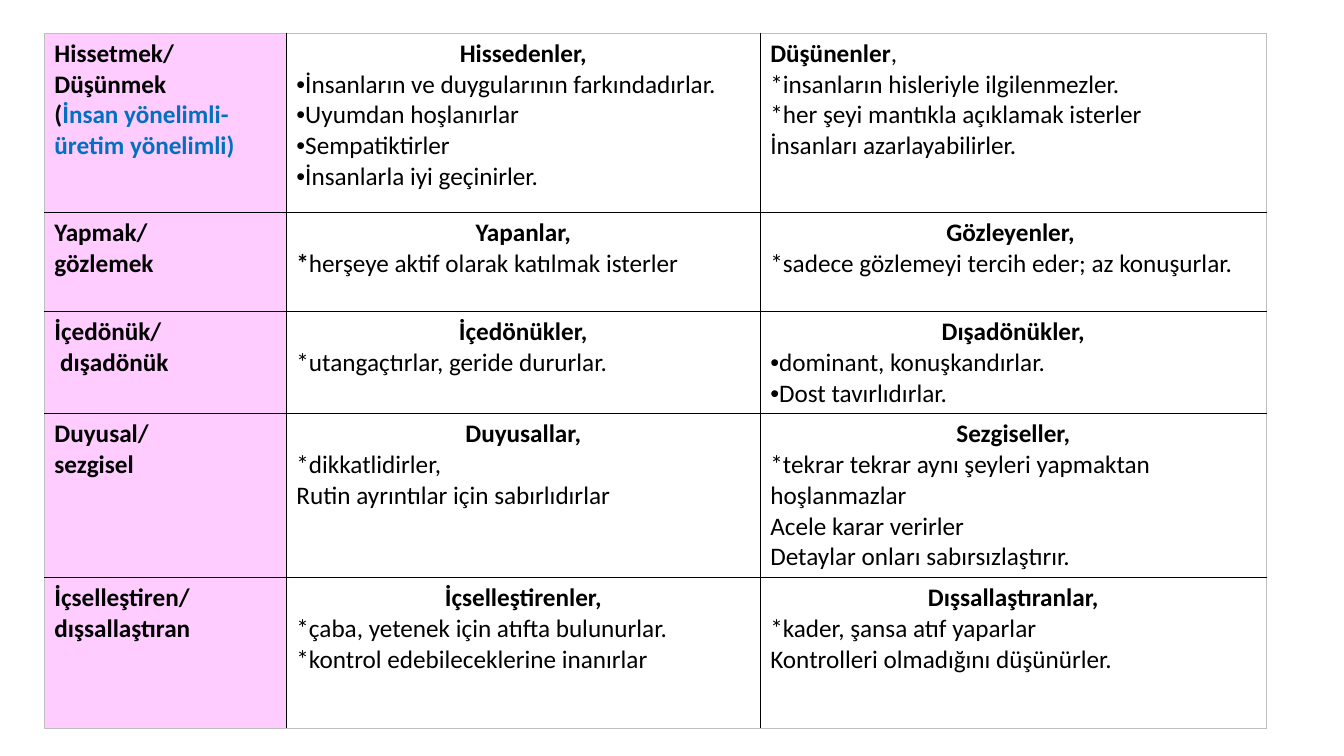
from lxml import etree
from pptx import Presentation
from pptx import util as u
from pptx.dml.color import RGBColor
from pptx.enum import text
from pptx.oxml.ns import qn

HUES = {"ink": "000000", "blue": "0070C0", "pink": "FFCCFF", "white": "FFFFFF", "edge": "BFBFBF"}
FORMS = {
    "bold": {"bold": True, "hue": "ink"},
    "plain": {"bold": False, "hue": "ink"},
    "blue": {"bold": True, "hue": "blue"},
}
COLS = [2.4, 4.7, 5.02]
ROWS = [1.78, 0.98, 0.93, 1.49, 1.49]
TRAITS = [
    [["Hissetmek/", "Düşünmek", [("(", "bold"), ("İnsan yönelimli-üretim yönelimli)", "blue")]],
     ["Hissedenler,", "•İnsanların ve duygularının farkındadırlar.", "•Uyumdan hoşlanırlar",
      "•Sempatiktirler", "•İnsanlarla iyi geçinirler."],
     [[("Düşünenler", "bold"), (",", "plain")], "*insanların hisleriyle ilgilenmezler.",
      "*her şeyi mantıkla açıklamak isterler", "İnsanları azarlayabilirler."]],
    [["Yapmak/", "gözlemek"],
     ["Yapanlar,", [("*", "bold"), ("herşeye aktif olarak katılmak isterler", "plain")]],
     ["Gözleyenler, ", "*sadece gözlemeyi tercih eder; az konuşurlar."]],
    [["İçedönük/", " dışadönük"],
     ["İçedönükler,", "*utangaçtırlar, geride dururlar."],
     ["Dışadönükler,", "•dominant, konuşkandırlar.", "•Dost tavırlıdırlar."]],
    [["Duyusal/", "sezgisel"],
     ["Duyusallar,", "*dikkatlidirler,", "Rutin ayrıntılar için sabırlıdırlar"],
     ["Sezgiseller,", "*tekrar tekrar aynı şeyleri yapmaktan hoşlanmazlar",
      "Acele karar verirler", "Detaylar onları sabırsızlaştırır."]],
    [["İçselleştiren/", "dışsallaştıran"],
     ["İçselleştirenler,", "*çaba, yetenek için atıfta bulunurlar.",
      "*kontrol edebileceklerine inanırlar"],
     ["Dışsallaştıranlar,", "*kader, şansa atıf yaparlar", "Kontrolleri olmadığını düşünürler."]],
]


def add_run(para, words, form):
    """Add one run in a named format."""
    run = para.add_run()
    run.text = words
    look = FORMS[form]
    for name, value in {"name": "Calibri", "size": u.Pt(18), "bold": look["bold"]}.items():
        setattr(run.font, name, value)
    run.font.color.rgb = RGBColor.from_string(HUES[look["hue"]])


def add_dot(para):
    """Give a paragraph a bullet with no indent."""
    props = para._p.get_or_add_pPr()
    props.set("marL", "0")
    props.set("indent", "0")
    etree.SubElement(props, qn("a:buFont"), typeface="Arial")
    etree.SubElement(props, qn("a:buChar"), char="•")


def fill_text(cell, lines, label):
    """Write the lines of a cell, with a centred heading outside the label column."""
    frame = cell.text_frame
    for i, line in enumerate(lines):
        para = frame.paragraphs[0] if i == 0 else frame.add_paragraph()
        para.alignment = text.PP_ALIGN.LEFT
        if isinstance(line, list):
            for words, form in line:
                add_run(para, words, form)
            continue
        if line.startswith("•"):
            add_dot(para)
        if i == 0 and not label:
            para.alignment = text.PP_ALIGN.CENTER
        add_run(para, line.removeprefix("•"), "bold" if label or i == 0 else "plain")


def set_edges(cell, outer):
    """Draw the four cell borders, with light ones on the outer sides."""
    props = cell._tc.get_or_add_tcPr()
    for i, side in enumerate(("lnL", "lnR", "lnT", "lnB")):
        hue, width = ("edge", 0.5) if side in outer else ("ink", 1)
        line = etree.Element(qn("a:" + side), w=str(u.Pt(width)))
        fill = etree.SubElement(line, qn("a:solidFill"))
        etree.SubElement(fill, qn("a:srgbClr"), val=HUES[hue])
        props.insert(i, line)


def add_grid(slide):
    """Add the table of learner traits."""
    frame = slide.shapes.add_table(len(ROWS), len(COLS), u.Inches(0.44), u.Inches(0.33),
                                   u.Inches(sum(COLS)), u.Inches(sum(ROWS)))
    grid = frame.table
    grid.first_row = grid.horz_banding = False
    for col, width in zip(grid.columns, COLS):
        col.width = u.Inches(width)
    for row, height in zip(grid.rows, ROWS):
        row.height = u.Inches(height)
    for r, row in enumerate(TRAITS):
        for c, lines in enumerate(row):
            cell = grid.cell(r, c)
            cell.fill.solid()
            cell.fill.fore_color.rgb = RGBColor.from_string(HUES["white" if c else "pink"])
            fill_text(cell, lines, c == 0)
            ends = {"lnL": c == 0, "lnR": c == len(COLS) - 1,
                    "lnT": r == 0, "lnB": r == len(ROWS) - 1}
            set_edges(cell, [side for side, end in ends.items() if end])


def main():
    """Build and save the slide."""
    deck = Presentation()
    deck.slide_width, deck.slide_height = u.Inches(13.33), u.Inches(7.5)
    add_grid(deck.slides.add_slide(deck.slide_layouts[6]))
    deck.save("out.pptx")


if __name__ == "__main__":
    main()
